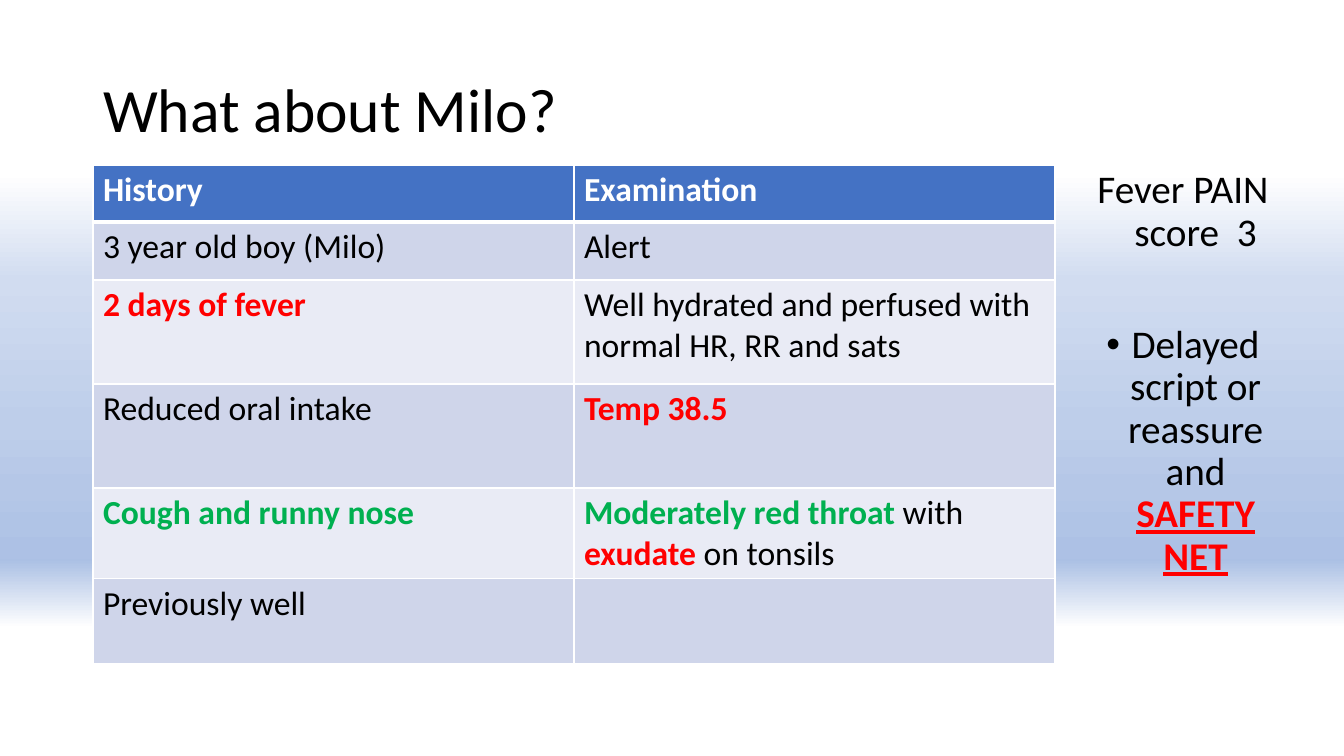
"""Build the slide on Milo's history, examination and treatment."""
from lxml.etree import SubElement
from pptx import Presentation
from pptx.dml.color import RGBColor
from pptx.enum.text import MSO_ANCHOR as Anchor, PP_ALIGN as Align
from pptx.oxml.ns import qn
from pptx.util import Pt

EMU_PER_PX = 914400 / 100.8
FONT = "Calibri"
BLACK = RGBColor(0x00, 0x00, 0x00)
WHITE = RGBColor(0xFF, 0xFF, 0xFF)
RED = RGBColor(0xFF, 0x00, 0x00)
GREEN = RGBColor(0x00, 0xB0, 0x50)
HEADER_BLUE = RGBColor(0x44, 0x72, 0xC4)
BANDS = (RGBColor(0xE9, 0xEB, 0xF5), RGBColor(0xCF, 0xD5, 0xEA))
BACKGROUND_STOPS = [
    (23, WHITE),
    (37, RGBColor(0xD1, 0xDC, 0xF0)),
    (56, RGBColor(0xBE, 0xCE, 0xEA)),
    (65, RGBColor(0xB5, 0xC7, 0xE7)),
    (69, RGBColor(0xB0, 0xC4, 0xE6)),
    (73, RGBColor(0xAD, 0xC1, 0xE5)),
    (74, RGBColor(0xAB, 0xC0, 0xE4)),
    (83, WHITE),
]

PLAIN = {}
HEADING = {"color": WHITE, "bold": True}
ALARM = {"color": RED, "bold": True}
MILD = {"color": GREEN, "bold": True}
ROW_HEIGHTS = [57, 58, 104, 104, 85, 85]
FINDINGS = [
    ([("History", HEADING)], [("Examination", HEADING)]),
    ([("3 year old boy (Milo)", PLAIN)], [("Alert", PLAIN)]),
    ([("2 days of fever", ALARM)],
     [("Well hydrated and perfused with normal HR, RR and sats", PLAIN)]),
    ([("Reduced oral intake", PLAIN)], [("Temp 38.5", ALARM)]),
    ([("Cough and runny nose", MILD)],
     [("Moderately red throat ", MILD), ("with ", PLAIN),
      ("exudate", ALARM), (" on tonsils", PLAIN)]),
    ([("Previously well", PLAIN)], []),
]


def px(*lengths):
    """Turn pixel lengths into a list of EMU."""
    return [round(length * EMU_PER_PX) for length in lengths]


def add_run(paragraph, text, size=24, color=BLACK, bold=False, underline=False):
    """Add a formatted run to a paragraph."""
    run = paragraph.add_run()
    run.text = text
    font = run.font
    font.name, font.size = FONT, Pt(size)
    font.bold, font.underline = bold, underline
    font.color.rgb = color


def set_background(slide):
    """Fill the slide background with the vertical blue gradient."""
    fill = slide.background.fill
    fill.gradient()
    fill.gradient_angle = 270
    stops = next(slide.element.iter(qn("a:gsLst")))
    for stop in list(stops):
        stops.remove(stop)
    for position, color in BACKGROUND_STOPS:
        stop = SubElement(stops, qn("a:gs"), pos=str(position * 1000))
        SubElement(stop, qn("a:srgbClr"), val=str(color))


def set_title(slide, text):
    """Place and format the title placeholder."""
    title = slide.shapes.title
    title.left, title.top, title.width, title.height = px(93, 40, 941, 146)
    title.text_frame.vertical_anchor = Anchor.MIDDLE
    paragraph = title.text_frame.paragraphs[0]
    paragraph.alignment = Align.LEFT
    paragraph.line_spacing = 0.9
    add_run(paragraph, text, size=44)


def set_borders(cell, top, bottom):
    """Draw white cell borders, with top and bottom widths in points."""
    properties = cell._tc.get_or_add_tcPr()
    for side, width in zip("LRTB", (1, 1, top, bottom)):
        line = SubElement(properties, qn(f"a:ln{side}"), w=str(Pt(width)))
        fill = SubElement(line, qn("a:solidFill"))
        SubElement(fill, qn("a:srgbClr"), val=str(WHITE))


def add_findings_table(slide):
    """Add the table of history and examination findings."""
    frame = slide.shapes.add_table(
        len(FINDINGS), 2, *px(93, 165, 962, sum(ROW_HEIGHTS)))
    table = frame.table
    for column in table.columns:
        column.width = px(481)[0]
    for index, (height, findings) in enumerate(zip(ROW_HEIGHTS, FINDINGS)):
        table.rows[index].height = px(height)[0]
        for cell, runs in zip(table.rows[index].cells, findings):
            set_borders(cell, top=3 if index == 1 else 1,
                        bottom=3 if index == 0 else 1)
            cell.fill.solid()
            cell.fill.fore_color.rgb = BANDS[index % 2] if index else HEADER_BLUE
            for text, style in runs:
                add_run(cell.text_frame.paragraphs[0], text, **style)


def format_advice(paragraph, bullet=None, space_before=0):
    """Centre an advice paragraph with a hanging indent."""
    properties = paragraph._p.get_or_add_pPr()
    properties.set("marL", "228600")
    properties.set("indent", "-228600")
    if bullet:
        SubElement(properties, qn("a:buFont"), typeface="Arial")
        SubElement(properties, qn("a:buChar"), char=bullet)
    paragraph.alignment = Align.CENTER
    paragraph.line_spacing = 0.9
    paragraph.space_before = Pt(space_before)


def add_advice(slide):
    """Add the score and the advice beside the table."""
    text_frame = slide.shapes.add_textbox(*px(1085, 165, 196, 480)).text_frame
    text_frame.word_wrap = True
    score = text_frame.paragraphs[0]
    format_advice(score)
    add_run(score, "Fever PAIN score  3", size=28)
    advice = text_frame.add_paragraph()
    format_advice(advice, bullet="•", space_before=50)
    add_run(advice, "Delayed script or reassure and ", size=28)
    add_run(advice, "SAFETY NET", size=28, underline=True, **ALARM)


def main():
    """Create and save the presentation."""
    presentation = Presentation()
    presentation.slide_width, presentation.slide_height = px(1344, 756)
    slide = presentation.slides.add_slide(presentation.slide_layouts[5])
    set_background(slide)
    set_title(slide, "What about Milo?")
    add_advice(slide)
    add_findings_table(slide)
    presentation.save("out.pptx")


if __name__ == "__main__":
    main()
